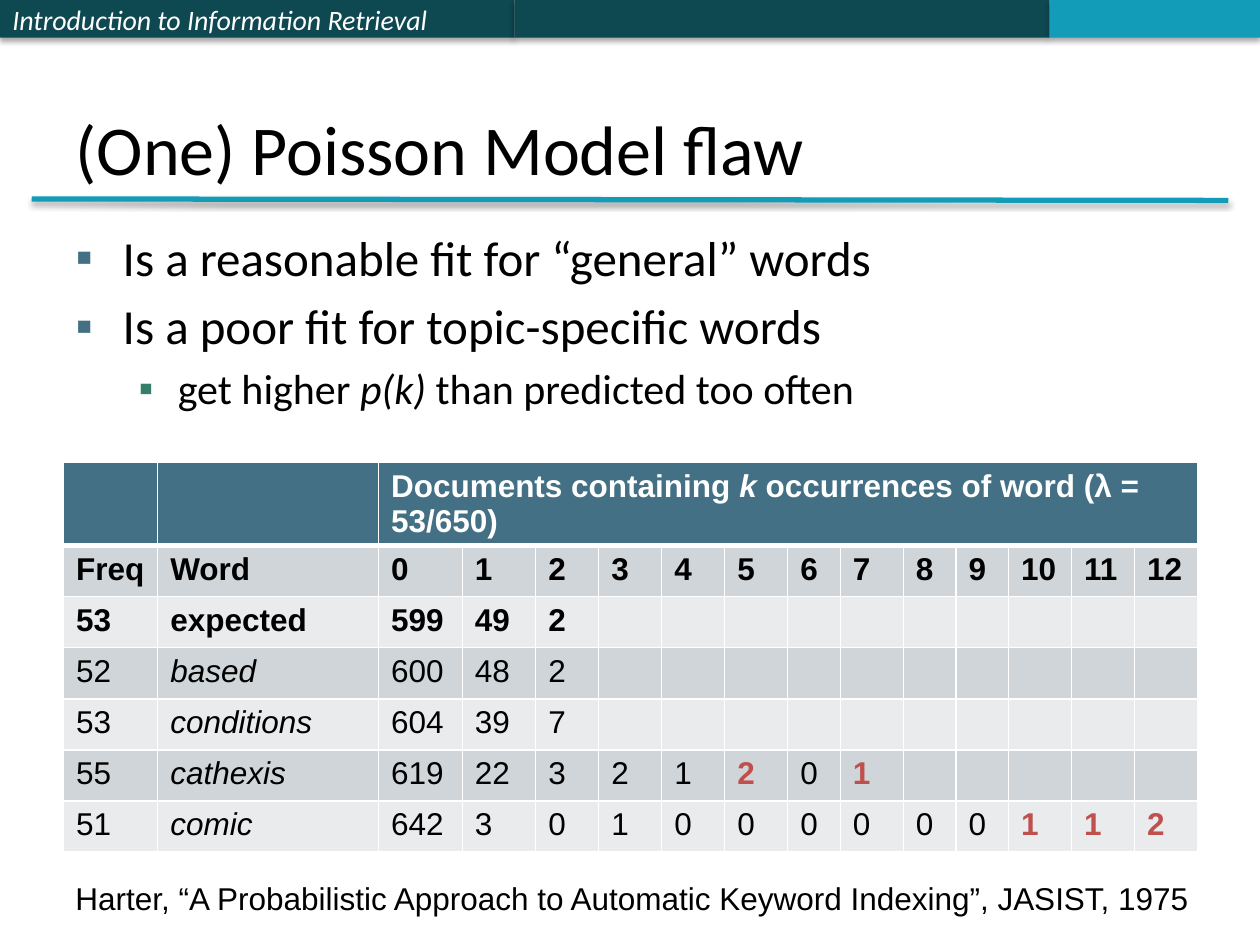
from typing import NamedTuple

from lxml import etree
from pptx import Presentation
from pptx.dml.color import RGBColor
from pptx.enum.shapes import MSO_CONNECTOR, MSO_SHAPE
from pptx.enum.text import MSO_ANCHOR, MSO_AUTO_SIZE, PP_ALIGN
from pptx.oxml.ns import qn
from pptx.util import Cm, Pt

RECTANGLE = MSO_SHAPE.RECTANGLE
STRAIGHT = MSO_CONNECTOR.STRAIGHT
LEFT = PP_ALIGN.LEFT
MIDDLE, BOTTOM = MSO_ANCHOR.MIDDLE, MSO_ANCHOR.BOTTOM
NO_FIT, GROW = MSO_AUTO_SIZE.NONE, MSO_AUTO_SIZE.SHAPE_TO_FIT_TEXT

BLACK = RGBColor(0x00, 0x00, 0x00)
WHITE = RGBColor(0xFF, 0xFF, 0xFF)
DARK_TEAL = RGBColor(0x0E, 0x48, 0x51)
TEAL = RGBColor(0x13, 0x9C, 0xB7)
SLATE = RGBColor(0x43, 0x70, 0x85)
GREEN = RGBColor(0x35, 0x7E, 0x69)
RED = RGBColor(0xC0, 0x50, 0x4D)
DARK_BAND = RGBColor(0xCF, 0xD5, 0xD9)
LIGHT_BAND = RGBColor(0xE9, 0xEB, 0xED)


class Bar(NamedTuple):
    left: float
    width: float
    color: RGBColor
    text: str = ""


class Bullet(NamedTuple):
    segments: tuple  # normal and italic text in turn
    level: int = 0
    size: int = 28
    margin: float = 0.95
    hanging: float = 0.95
    color: RGBColor = SLATE


BARS = [
    Bar(0, 10.37, DARK_TEAL, "Introduction to Information Retrieval"),
    Bar(10.37, 10.79, DARK_TEAL),
    Bar(21.16, 4.24, TEAL),
]
BULLETS = [
    Bullet(("Is a reasonable fit for “general” words",)),
    Bullet(("Is a poor fit for topic-specific words",)),
    Bullet(("get higher ", "p(k) ", "than predicted too often"), 1, 24, 2.06, 0.79, GREEN),
]
HEADING = ("Documents containing ", "k", " occurrences of word (λ = 53/650)")
COLUMN_WIDTHS = [1.9, 4.45, 1.69, 1.48] + [1.27] * 4 + [1.06, 1.27, 1.06, 1.06] + [1.27] * 3
ROWS = [
    ["Freq", "Word", *range(13)],
    [53, "expected", 599, 49, 2],
    [52, "based", 600, 48, 2],
    [53, "conditions", 604, 39, 7],
    [55, "cathexis", 619, 22, 3, 2, 1, 2, 0, 1],
    [51, "comic", 642, 3, 0, 1, 0, 0, 0, 0, 0, 0, 1, 1, 2],
]
HIGHLIGHTS = {(5, 7), (5, 9), (6, 12), (6, 13), (6, 14)}


def add_text(paragraph, text: str, *, size=18, font="Arial", color=BLACK,
             bold=False, italic=False) -> None:
    run = paragraph.add_run()
    run.text = text
    run.font.size = Pt(size)
    run.font.name = font
    run.font.color.rgb = color
    run.font.bold = bold
    run.font.italic = italic


def add_segments(paragraph, segments: tuple, **style) -> None:
    """Write normal and italic text in turn."""
    for index, segment in enumerate(segments):
        add_text(paragraph, segment, italic=index % 2 == 1, **style)


def add_color(parent, color: RGBColor):
    return etree.SubElement(parent, qn("a:srgbClr"), val=str(color))


def add_shadow(shape) -> None:
    effects = etree.SubElement(shape._element.spPr, qn("a:effectLst"))
    shadow = etree.SubElement(effects, qn("a:outerShdw"), blurRad=str(Pt(3.1)),
                              dist=str(Pt(1.8)), dir="5400000", rotWithShape="0")
    etree.SubElement(add_color(shadow, BLACK), qn("a:alpha"), val="35000")


def add_bar(slide, bar: Bar) -> None:
    shape = slide.shapes.add_shape(RECTANGLE, Cm(bar.left), 0, Cm(bar.width), Cm(0.76))
    shape.fill.solid()
    shape.fill.fore_color.rgb = bar.color
    shape.line.fill.background()
    add_shadow(shape)
    if bar.text:
        frame = shape.text_frame
        frame.word_wrap = True
        frame.vertical_anchor = MIDDLE
        frame.paragraphs[0].alignment = LEFT
        add_text(frame.paragraphs[0], bar.text, size=16, font="Calibri",
                 color=WHITE, italic=True)


def place(shape, left: float, top: float, width: float, height: float) -> None:
    shape.left, shape.top = Cm(left), Cm(top)
    shape.width, shape.height = Cm(width), Cm(height)


def write_bullet(paragraph, bullet: Bullet) -> None:
    paragraph.level = bullet.level
    properties = paragraph._p.get_or_add_pPr()
    properties.set("marL", str(Cm(bullet.margin)))
    properties.set("indent", str(-Cm(bullet.hanging)))
    add_color(etree.SubElement(properties, qn("a:buClr")), bullet.color)
    etree.SubElement(properties, qn("a:buFont"), typeface="Arial")
    etree.SubElement(properties, qn("a:buChar"), char="▪")
    add_segments(paragraph, bullet.segments, size=bullet.size, font="Calibri")


def format_cell(cell, row: int) -> None:
    """Give a cell its white borders and its band colour."""
    properties = cell._tc.get_or_add_tcPr()
    widths = {"lnL": 1, "lnR": 1, "lnT": 3 if row == 1 else 1, "lnB": 3 if row == 0 else 1}
    for side, width in widths.items():
        border = etree.SubElement(properties, qn(f"a:{side}"), w=str(Pt(width)))
        add_color(etree.SubElement(border, qn("a:solidFill")), WHITE)
    cell.fill.solid()
    cell.fill.fore_color.rgb = SLATE if row == 0 else DARK_BAND if row % 2 else LIGHT_BAND


def add_word_table(slide) -> None:
    row_count, column_count = len(ROWS) + 1, len(COLUMN_WIDTHS)
    table = slide.shapes.add_table(row_count, column_count, Cm(1.28), Cm(9.32),
                                   Cm(sum(COLUMN_WIDTHS)), Cm(1.03 * row_count)).table
    for column, width in zip(table.columns, COLUMN_WIDTHS):
        column.width = Cm(width)
    for row in range(row_count):
        for column in range(column_count):
            format_cell(table.cell(row, column), row)
    table.cell(0, 2).merge(table.cell(0, column_count - 1))
    add_segments(table.cell(0, 2).text_frame.paragraphs[0], HEADING, color=WHITE, bold=True)
    for row, values in enumerate(ROWS, start=1):
        for column, value in enumerate(values):
            highlighted = (row, column) in HIGHLIGHTS
            add_text(table.cell(row, column).text_frame.paragraphs[0], str(value),
                     color=RED if highlighted else BLACK,
                     bold=row <= 2 or highlighted, italic=row > 2 and column == 1)


def main() -> None:
    presentation = Presentation()
    presentation.slide_width, presentation.slide_height = Cm(25.4), Cm(19.05)
    slide = presentation.slides.add_slide(presentation.slide_layouts[1])

    # Header bars and the rule below the title
    for bar in BARS:
        add_bar(slide, bar)
    rule = slide.shapes.add_connector(STRAIGHT, Cm(0.64), Cm(4.01), Cm(24.76), Cm(4.04))
    rule.line.color.rgb = TEAL
    rule.line.width = Pt(3)
    add_shadow(rule)

    # Title
    title = slide.shapes.title
    place(title, 1.27, 0.76, 22.86, 3.18)
    title.text_frame.auto_size = NO_FIT
    title.text_frame.vertical_anchor = BOTTOM
    title.text_frame.paragraphs[0].alignment = LEFT
    add_text(title.text_frame.paragraphs[0], "(One) Poisson Model flaw", size=40, font="Calibri")

    # Bullet list
    body = slide.placeholders[1]
    place(body, 1.27, 4.45, 22.86, 13.76)
    frame = body.text_frame
    frame.auto_size = NO_FIT
    for index, bullet in enumerate(BULLETS):
        write_bullet(frame.add_paragraph() if index else frame.paragraphs[0], bullet)

    # Word counts and their reference
    add_word_table(slide)
    reference = slide.shapes.add_textbox(Cm(1.27), Cm(17.6), Cm(23.19), Cm(1.03))
    reference.text_frame.word_wrap = False
    reference.text_frame.auto_size = GROW
    add_text(reference.text_frame.paragraphs[0],
             "Harter, “A Probabilistic Approach to Automatic Keyword Indexing”, JASIST, 1975")

    presentation.save("out.pptx")


if __name__ == "__main__":
    main()
